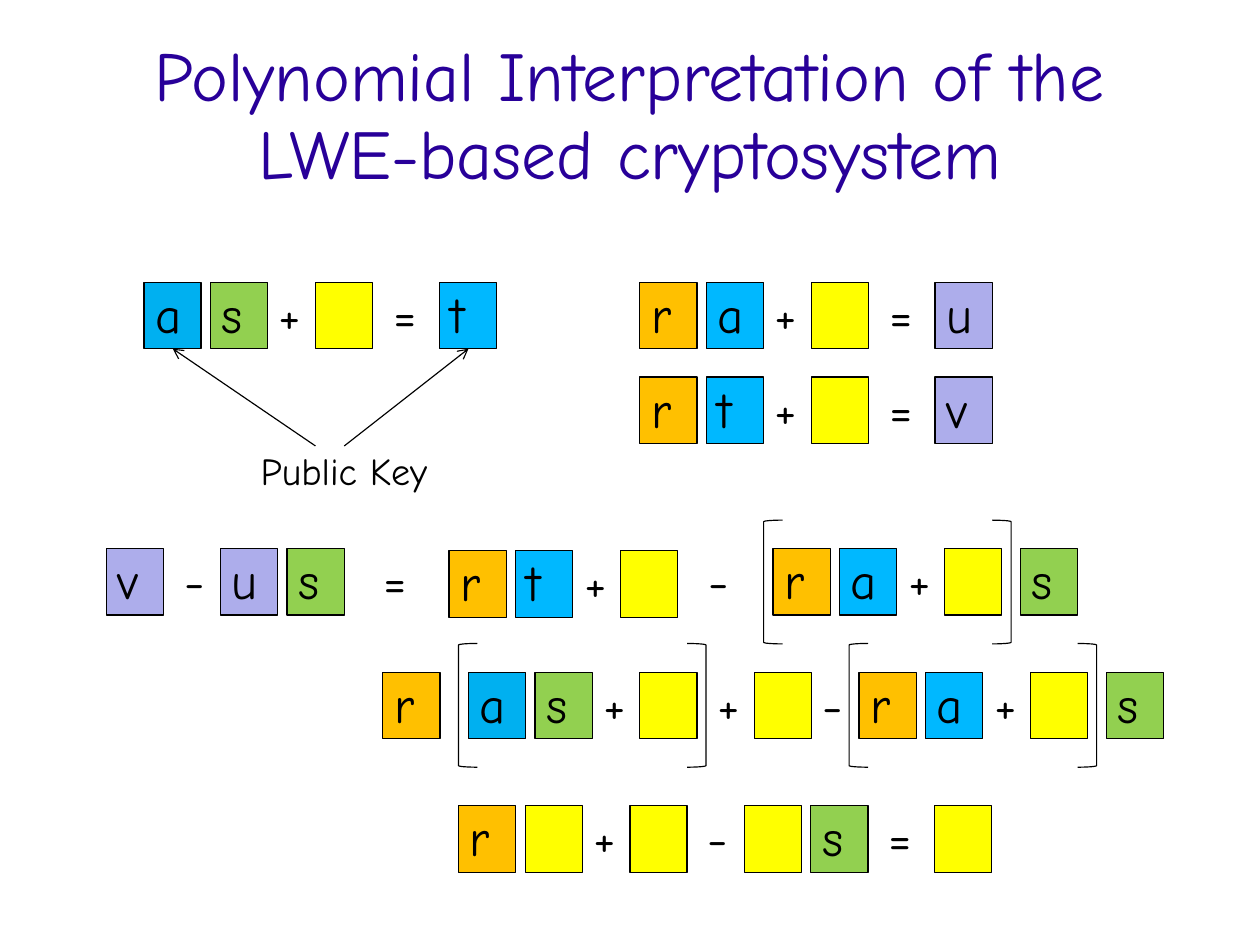
"""Build the slide on the polynomial view of the LWE-based cryptosystem."""
from lxml import etree
from pptx import Presentation
from pptx.dml.color import RGBColor
from pptx.enum.shapes import MSO_CONNECTOR, MSO_SHAPE
from pptx.enum.text import MSO_ANCHOR, PP_ALIGN
from pptx.oxml.ns import qn
from pptx.util import Cm, Pt

RECT = MSO_SHAPE.RECTANGLE
BRACKETS = (MSO_SHAPE.LEFT_BRACKET, MSO_SHAPE.RIGHT_BRACKET)
STRAIGHT = MSO_CONNECTOR.STRAIGHT
TOP, MIDDLE = MSO_ANCHOR.TOP, MSO_ANCHOR.MIDDLE
LEFT, CENTER = PP_ALIGN.LEFT, PP_ALIGN.CENTER

FONT = "Comic Neue"
BLACK = RGBColor(0x00, 0x00, 0x00)
INDIGO = RGBColor(0x28, 0x00, 0x99)
AZURE = RGBColor(0x00, 0xB0, 0xF0)
SKY = RGBColor(0x00, 0xB8, 0xFF)
GREEN = RGBColor(0x92, 0xD0, 0x50)
YELLOW = RGBColor(0xFF, 0xFF, 0x00)
ORANGE = RGBColor(0xFF, 0xC0, 0x00)
LILAC = RGBColor(0xAD, 0xAD, 0xEB)

FILLS = {"A": AZURE, "a": SKY, "t": SKY, "s": GREEN, "r": ORANGE,
         "u": LILAC, "v": LILAC, "_": YELLOW}
BOX_W, BOX_H = 1.27, 1.48
SIGN_W, SIGN_H = 1.06, 1.52
GAP = 0.21

FORMULAS = [
    (3.2, 6.27, "A s+_ = t"),
    (14.22, 6.27, "r a+_ = u"),
    (14.22, 8.38, "r t+_ = v"),
    (2.36, 12.19, "v -u s   ="),
    (9.98, 12.24, "r t+_"),
    (15.49, 12.19, "-   r a+_  s"),
    (8.51, 14.94, "r   A s+_ +_-r a+_  s"),
    (10.19, 17.91, "r _+_ -_ s = _"),
]
BRACKET_PAIRS = [(16.97, 11.56), (10.19, 14.3), (18.87, 14.3)]
BRACKET_SPAN = 5.08
ARROWS = [((7.01, 9.91), (3.84, 7.75)), ((7.65, 9.91), (10.41, 7.75))]


def write(sp, text, size, color=BLACK, align=LEFT, anchor=TOP):
    tf = sp.text_frame
    tf.word_wrap = True
    tf.vertical_anchor = anchor
    p = tf.paragraphs[0]
    p.text = text
    p.alignment = align
    p.line_spacing = 0.93
    p.font.name = FONT
    p.font.size = Pt(size)
    p.font.color.rgb = color
    return tf


def outline(sp):
    sp.shadow.inherit = False
    sp.line.color.rgb = BLACK
    sp.line.width = Pt(0.75)


prs = Presentation()
prs.slide_width, prs.slide_height = Cm(28), Cm(21)
s = prs.slides.add_slide(prs.slide_layouts[5])

title = s.shapes.title
title.left, title.top, title.width, title.height = Cm(1.4), Cm(0.84), Cm(25.2), Cm(3.51)
tf = write(title, "Polynomial Interpretation of the LWE-based cryptosystem",
           44, INDIGO, CENTER, MIDDLE)
tf.margin_left = tf.margin_right = tf.margin_top = tf.margin_bottom = 0

for x, y, formula in FORMULAS:
    for symbol in formula:
        if symbol == " ":
            x += GAP
        elif symbol in FILLS:
            sp = s.shapes.add_shape(RECT, Cm(x), Cm(y), Cm(BOX_W), Cm(BOX_H))
            outline(sp)
            sp.fill.solid()
            sp.fill.fore_color.rgb = FILLS[symbol]
            if symbol != "_":
                write(sp, symbol.lower(), 32)
            x += BOX_W
        else:
            sp = s.shapes.add_textbox(Cm(x), Cm(y), Cm(SIGN_W), Cm(SIGN_H))
            write(sp, symbol, 32)
            x += SIGN_W

for x, y in BRACKET_PAIRS:
    for i, kind in enumerate(BRACKETS):
        sp = s.shapes.add_shape(kind, Cm(x + i * BRACKET_SPAN), Cm(y), Cm(0.42), Cm(2.75))
        outline(sp)
        sp.fill.background()

for (x1, y1), (x2, y2) in ARROWS:
    arrow = s.shapes.add_connector(STRAIGHT, Cm(x1), Cm(y1), Cm(x2), Cm(y2))
    arrow.line.color.rgb = BLACK
    arrow.line.width = Pt(0.75)
    etree.SubElement(arrow.line._get_or_add_ln(), qn("a:tailEnd"), type="arrow")
    etree.SubElement(arrow._element.spPr, qn("a:effectLst"))

key = s.shapes.add_textbox(Cm(5.54), Cm(9.91), Cm(5.28), Cm(1.22))
write(key, "Public Key", 24)

prs.save("out.pptx")
